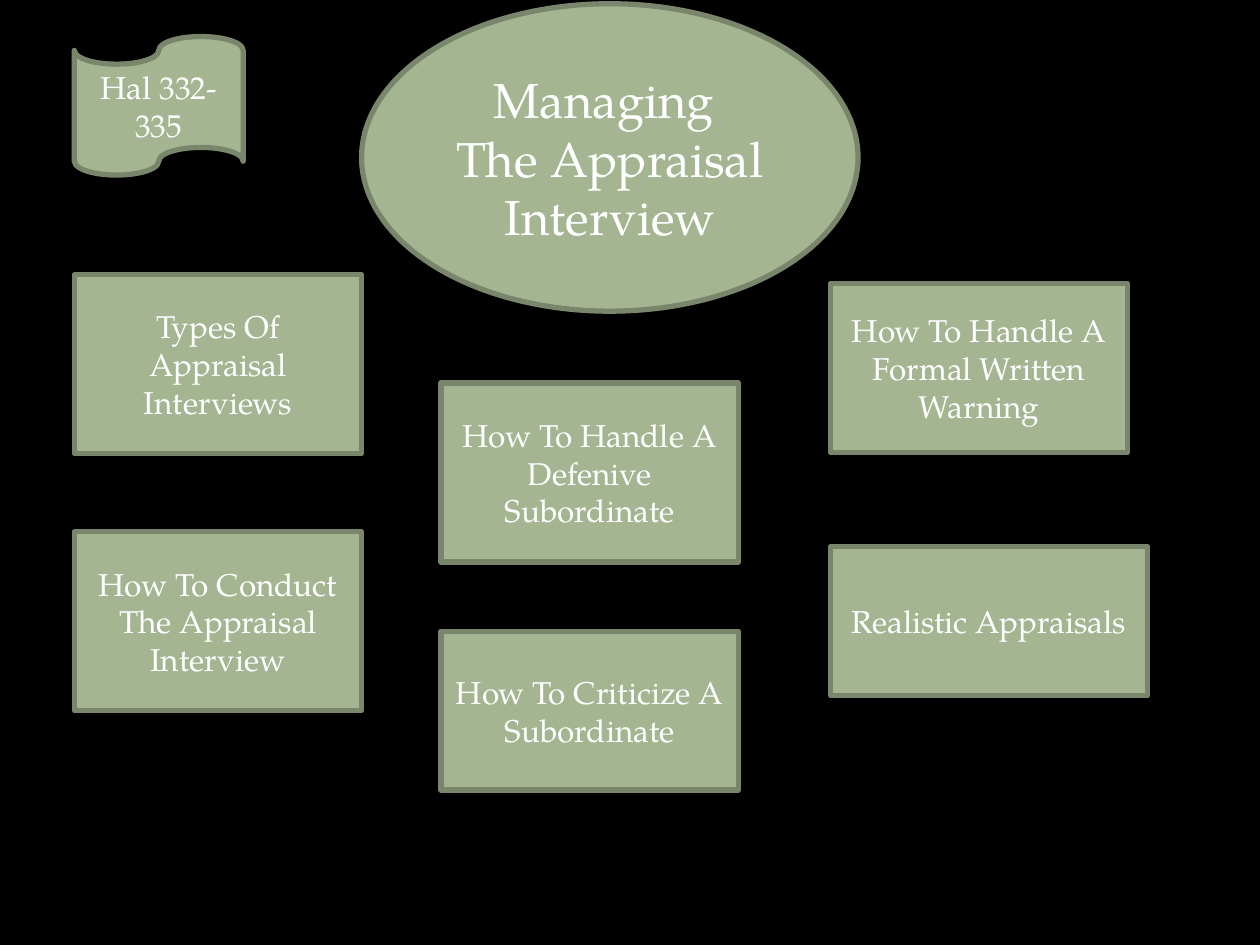
from dataclasses import dataclass

from pptx import Presentation
from pptx.dml.color import RGBColor
from pptx.enum.shapes import MSO_SHAPE
from pptx.enum.text import MSO_ANCHOR, PP_ALIGN
from pptx.util import Inches, Pt


@dataclass(frozen=True)
class Theme:
    background: RGBColor = RGBColor(0x00, 0x00, 0x00)
    fill: RGBColor = RGBColor(0xA5, 0xB5, 0x92)
    outline: RGBColor = RGBColor(0x7A, 0x86, 0x6C)
    text: RGBColor = RGBColor(0xFF, 0xFF, 0xFF)
    font: str = "TeX Gyre Pagella"
    title_size: int = 28
    body_size: int = 18
    outline_width: int = 3


theme = Theme()

deck = Presentation()
deck.slide_width, deck.slide_height = Inches(10), Inches(7.5)
page = deck.slides.add_slide(deck.slide_layouts[6])
page.background.fill.solid()
page.background.fill.fore_color.rgb = theme.background


def add_box(kind, left, top, width, height, lines, size=theme.body_size):
    """Add an outlined shape with centred text, one paragraph per line."""
    box = page.shapes.add_shape(
        kind, Inches(left), Inches(top), Inches(width), Inches(height))
    box.shadow.inherit = False
    box.fill.solid()
    box.fill.fore_color.rgb = theme.fill
    box.line.color.rgb = theme.outline
    box.line.width = Pt(theme.outline_width)

    frame = box.text_frame
    frame.word_wrap = True
    frame.vertical_anchor = MSO_ANCHOR.MIDDLE
    font_format = {"name": theme.font, "size": Pt(size)}
    for index, line in enumerate(lines):
        para = frame.add_paragraph() if index else frame.paragraphs[0]
        para.alignment = PP_ALIGN.CENTER
        span = para.add_run()
        span.text = line
        for name, value in font_format.items():
            setattr(span.font, name, value)
        span.font.color.rgb = theme.text


# Title
add_box(MSO_SHAPE.OVAL, 2.87, 0.03, 3.94, 2.44,
        ["Managing ", "The Appraisal Interview"], theme.title_size)

# Topics by column: left edge, then top, width, height and wording of each
topic_columns = {
    0.59: [(2.18, 2.28, 1.42, "Types Of Appraisal Interviews"),
           (4.22, 2.28, 1.42, "How To Conduct The Appraisal Interview")],
    3.5: [(3.04, 2.36, 1.42, "How To Handle A Defenive Subordinate"),
          (5.01, 2.36, 1.26, "How To Criticize A Subordinate")],
    6.59: [(2.25, 2.36, 1.34, "How To Handle A Formal Written Warning"),
           (4.34, 2.52, 1.18, "Realistic Appraisals")],
}
for left, topics in topic_columns.items():
    for top, width, height, wording in topics:
        add_box(MSO_SHAPE.RECTANGLE, left, top, width, height, [wording])

# Page reference
add_box(MSO_SHAPE.FLOWCHART_PUNCHED_TAPE, 0.59, 0.29, 1.34, 1.1, ["Hal 332-335"])

deck.save("out.pptx")
